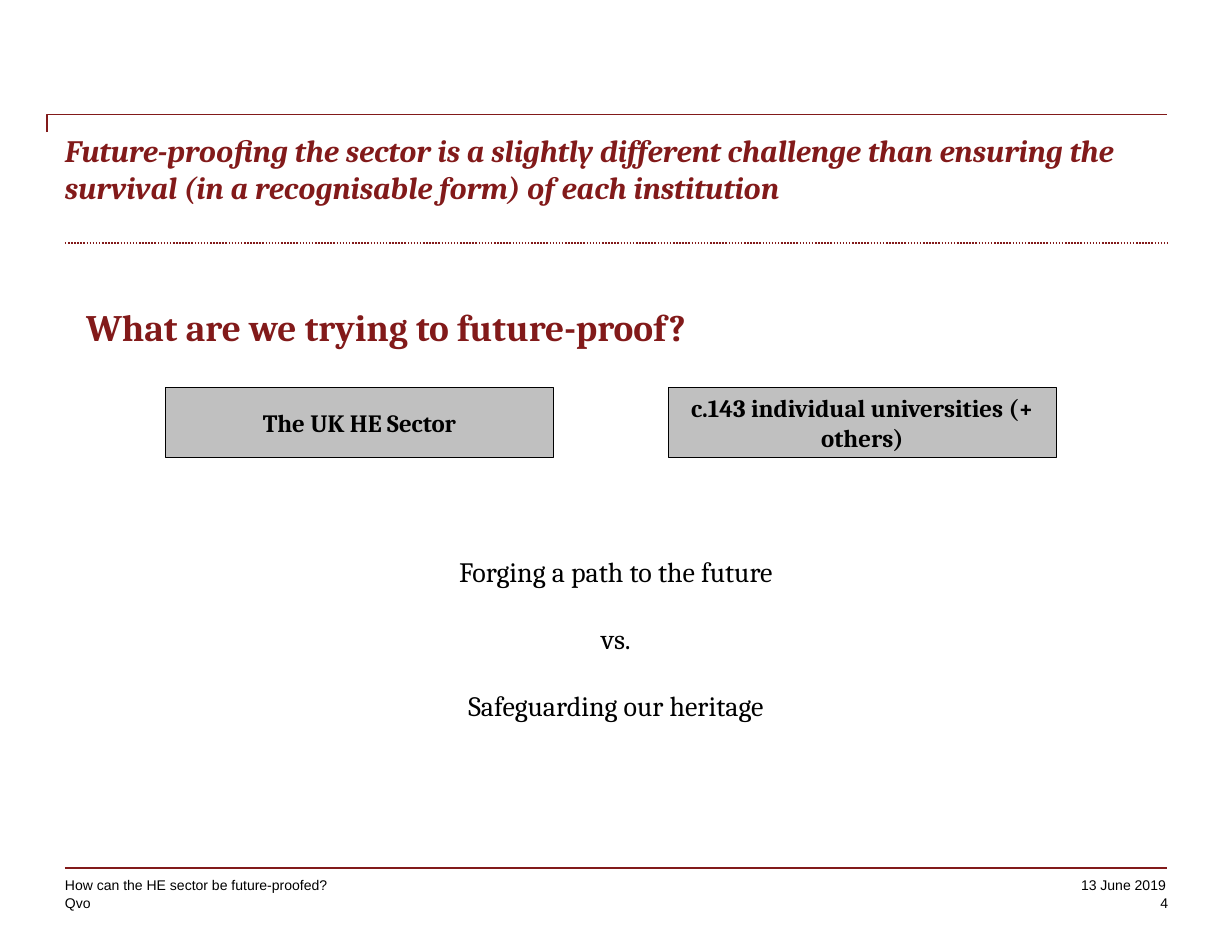
"""Build a slide contrasting the UK HE sector with its individual universities."""
from dataclasses import dataclass
from typing import Optional

from lxml import etree
from pptx import Presentation
from pptx import util as u
from pptx.dml.color import RGBColor
from pptx.enum import dml, shapes, text
from pptx.oxml.ns import qn

EMU_PER_PX = 9144


@dataclass(frozen=True)
class Theme:
    accent: str = "821A1A"
    ink: str = "000000"
    panel: str = "C0C0C0"
    serif: str = "Cambria"
    sans: str = "Arial"
    footer: float = 9
    label: float = 16
    body: float = 18
    title: float = 20
    heading: float = 24


THEME = Theme()
LEFT, RIGHT = 58, 1042
ALIGN = text.PP_ALIGN


@dataclass(frozen=True)
class Frame:
    left: int
    top: int
    width: int
    height: int

    def emu(self) -> list[int]:
        return [px(side) for side in (self.left, self.top, self.width, self.height)]


@dataclass(frozen=True)
class Style:
    size: float
    font: str = THEME.serif
    color: str = THEME.ink
    bold: bool = False
    italic: bool = False
    align: ALIGN = ALIGN.LEFT
    spacing: Optional[float] = None
    gap: float = 0


@dataclass(frozen=True)
class Label:
    frame: Frame
    lines: tuple[str, ...]
    style: Style
    wrap: bool = True
    anchor: text.MSO_ANCHOR = text.MSO_ANCHOR.TOP


@dataclass(frozen=True)
class Rule:
    top: int
    weight: float
    dash: Optional[dml.MSO_LINE] = None


TITLE = Style(THEME.title, color=THEME.accent, bold=True, italic=True)
HEADING = Style(THEME.heading, color=THEME.accent, bold=True, spacing=1.5)
PANEL = Style(THEME.label, bold=True, align=ALIGN.CENTER)
CONTRAST = Style(THEME.body, align=ALIGN.CENTER, gap=21.5)
FOOTER = Style(THEME.footer, THEME.sans)
FOOTER_RIGHT = Style(THEME.footer, THEME.sans, align=ALIGN.RIGHT)
FOOTER_TIGHT = Style(THEME.footer, THEME.sans, spacing=u.Pt(10))
PAGE_NUMBER = Style(THEME.footer, THEME.sans, align=ALIGN.RIGHT, spacing=u.Pt(10))

LABELS = (
    Label(Frame(LEFT, 117, RIGHT - LEFT, 92),
          ("Future-proofing the sector is a slightly different challenge than ensuring "
           "the survival (in a recognisable form) of each institution",), TITLE),
    Label(Frame(77, 252, 870, 495), ("What are we trying to future-proof?",), HEADING),
    Label(Frame(396, 495, 308, 151),
          ("Forging a path to the future", "vs.", "Safeguarding our heritage"),
          CONTRAST, wrap=False),
    Label(Frame(LEFT, 783, 317, 15), ("How can the HE sector be future-proofed?",),
          FOOTER, anchor=text.MSO_ANCHOR.BOTTOM),
    Label(Frame(LEFT, 800, 30, 12), ("Qvo",), FOOTER_TIGHT, wrap=False),
    Label(Frame(965, 783, 76, 15), ("13 June 2019",), FOOTER_RIGHT, wrap=False),
    Label(Frame(1008, 800, 35, 17), ("4",), PAGE_NUMBER, wrap=False),
)
RULES = (Rule(217, 1, dml.MSO_LINE.ROUND_DOT), Rule(775, 0.75))
PANELS = ("The UK HE Sector", "c.143 individual universities (+ others)")
FIRST_PANEL = Frame(148, 346, 346, 62)
PANEL_STEP = 449
CORNER = ((42, 118), (42, 102), (RIGHT, 102))


def px(length: int) -> int:
    return u.Emu(length * EMU_PER_PX)


def rgb(color: str) -> RGBColor:
    return RGBColor.from_string(color)


def write(frame, lines: tuple[str, ...], style: Style) -> None:
    for index, line in enumerate(lines):
        para = frame.add_paragraph() if index else frame.paragraphs[0]
        para.text = line
        para.alignment = style.align
        if style.spacing:
            para.line_spacing = style.spacing
        if index:
            para.space_before = u.Pt(style.gap)
        font = para.font
        font.name, font.size = style.font, u.Pt(style.size)
        font.bold, font.italic = style.bold, style.italic
        font.color.rgb = rgb(style.color)


def draw_label(page, label: Label) -> None:
    frame = page.shapes.add_textbox(*label.frame.emu()).text_frame
    frame.margin_left = frame.margin_right = frame.margin_top = frame.margin_bottom = 0
    frame.word_wrap = label.wrap
    frame.vertical_anchor = label.anchor
    write(frame, label.lines, label.style)


def draw_panel(page, frame: Frame, caption: str) -> None:
    panel = page.shapes.add_shape(shapes.MSO_SHAPE.RECTANGLE, *frame.emu())
    panel.shadow.inherit = False
    panel.fill.solid()
    panel.fill.fore_color.rgb = rgb(THEME.panel)
    panel.line.color.rgb = rgb(THEME.ink)
    panel.line.width = u.Pt(0.5)
    panel.text_frame.word_wrap = True
    panel.text_frame.vertical_anchor = text.MSO_ANCHOR.MIDDLE
    write(panel.text_frame, (caption,), PANEL)


def draw_rule(page, rule: Rule) -> None:
    line = page.shapes.add_connector(
        shapes.MSO_CONNECTOR.STRAIGHT, px(LEFT), px(rule.top), px(RIGHT), px(rule.top))
    line.line.color.rgb = rgb(THEME.accent)
    line.line.width = u.Pt(rule.weight)
    if rule.dash:
        line.line.dash_style = rule.dash
    etree.SubElement(line._element.spPr, qn("a:effectLst"))


def draw_corner(page, points: tuple[tuple[int, int], ...]) -> None:
    builder = page.shapes.build_freeform(*points[0], scale=EMU_PER_PX)
    builder.add_line_segments(points[1:], close=False)
    corner = builder.convert_to_shape()
    corner.shadow.inherit = False
    corner.fill.background()
    corner.line.color.rgb = rgb(THEME.accent)
    corner.line.width = u.Pt(0.75)


def main() -> None:
    deck = Presentation()
    deck.slide_width, deck.slide_height = px(1100), px(850)
    page = deck.slides.add_slide(deck.slide_layouts[6])
    for rule in RULES:
        draw_rule(page, rule)
    draw_corner(page, CORNER)
    for index, caption in enumerate(PANELS):
        left = FIRST_PANEL.left + index * PANEL_STEP
        draw_panel(page, Frame(left, FIRST_PANEL.top, FIRST_PANEL.width,
                               FIRST_PANEL.height), caption)
    for label in LABELS:
        draw_label(page, label)
    deck.save("out.pptx")


if __name__ == "__main__":
    main()
